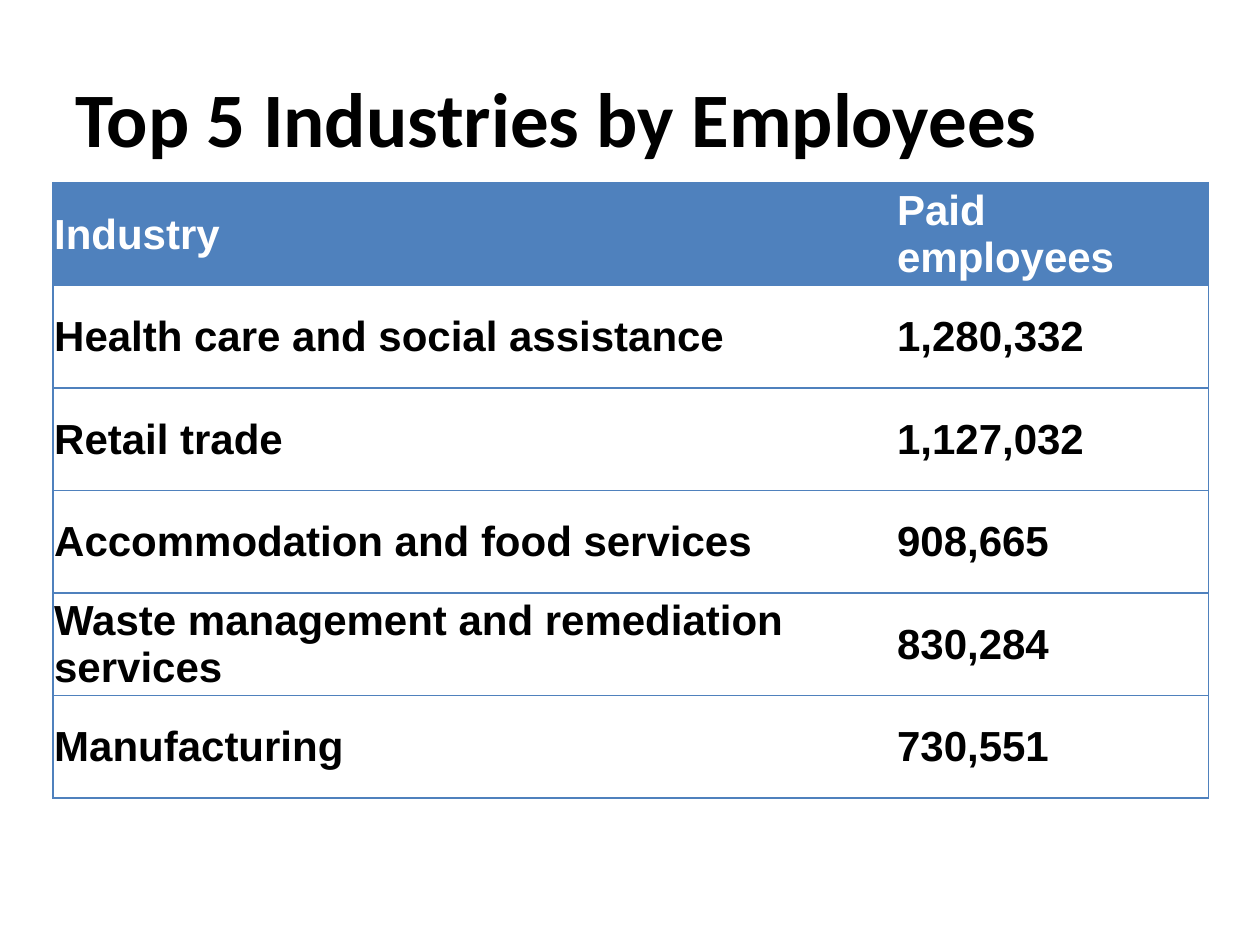
from dataclasses import dataclass

from lxml import etree
from pptx import Presentation
from pptx.dml.color import RGBColor
from pptx.enum import text
from pptx.oxml import ns
from pptx.util import Inches, Pt

TITLE = "Top 5 Industries by Employees"
HEADER = ("Industry", "Paid employees")
INDUSTRIES = [
    ("Health care and social assistance", "1,280,332"),
    ("Retail trade", "1,127,032"),
    ("Accommodation and food services", "908,665"),
    ("Waste management and remediation services", "830,284"),
    ("Manufacturing", "730,551"),
]
COLUMN_WIDTHS = (6.69, 2.48)
ROW_HEIGHT = 0.814


@dataclass(frozen=True)
class Theme:
    accent: str = "4F81BD"
    white: str = "FFFFFF"
    black: str = "000000"
    title_font: str = "Calibri"
    table_font: str = "Arial"
    title_size: int = 44
    table_size: int = 24
    border: int = 1


THEME = Theme()


def style_paragraph(paragraph, name, size, color):
    font = paragraph.font
    font.name, font.size, font.bold = name, Pt(size), True
    font.color.rgb = RGBColor.from_string(color)


def set_borders(cell, visible_edges):
    properties = cell._tc.get_or_add_tcPr()
    for edge in "LRTB":
        line = etree.SubElement(properties, ns.qn(f"a:ln{edge}"))
        if edge in visible_edges:
            line.set("w", str(Pt(THEME.border)))
            fill = etree.SubElement(line, ns.qn("a:solidFill"))
            etree.SubElement(fill, ns.qn("a:srgbClr"), val=THEME.accent)
        else:
            etree.SubElement(line, ns.qn("a:noFill"))


def add_title(slide):
    box = slide.shapes.add_textbox(Inches(0.5), Inches(0.3), Inches(9), Inches(1.25))
    frame = box.text_frame
    frame.word_wrap = True
    frame.vertical_anchor = text.MSO_ANCHOR.MIDDLE
    frame.text = TITLE
    style_paragraph(frame.paragraphs[0], THEME.title_font, THEME.title_size, THEME.black)


def fill_cell(cell, content, is_header, edges):
    cell.text = content
    cell.vertical_anchor = text.MSO_ANCHOR.MIDDLE
    cell.margin_left = cell.margin_right = cell.margin_top = Inches(0.01)
    cell.margin_bottom = 0
    set_borders(cell, edges)
    cell.fill.solid()
    cell.fill.fore_color.rgb = RGBColor.from_string(THEME.accent if is_header else THEME.white)
    color = THEME.white if is_header else THEME.black
    style_paragraph(cell.text_frame.paragraphs[0], THEME.table_font, THEME.table_size, color)


def add_industry_table(slide):
    rows = [HEADER, *INDUSTRIES]
    table = slide.shapes.add_table(
        len(rows), len(HEADER), Inches(0.42), Inches(1.45),
        Inches(sum(COLUMN_WIDTHS)), Inches(ROW_HEIGHT * len(rows)),
    ).table
    table.horz_banding = False
    for column, width in zip(table.columns, COLUMN_WIDTHS):
        column.width = Inches(width)
    for row_index, values in enumerate(rows):
        table.rows[row_index].height = Inches(ROW_HEIGHT)
        for column_index, (value, edges) in enumerate(zip(values, ("LTB", "RTB"))):
            fill_cell(table.cell(row_index, column_index), value, row_index == 0, edges)


def main():
    presentation = Presentation()
    presentation.slide_width, presentation.slide_height = Inches(10), Inches(7.5)
    slide = presentation.slides.add_slide(presentation.slide_layouts[6])
    add_title(slide)
    add_industry_table(slide)
    presentation.save("out.pptx")


if __name__ == "__main__":
    main()
